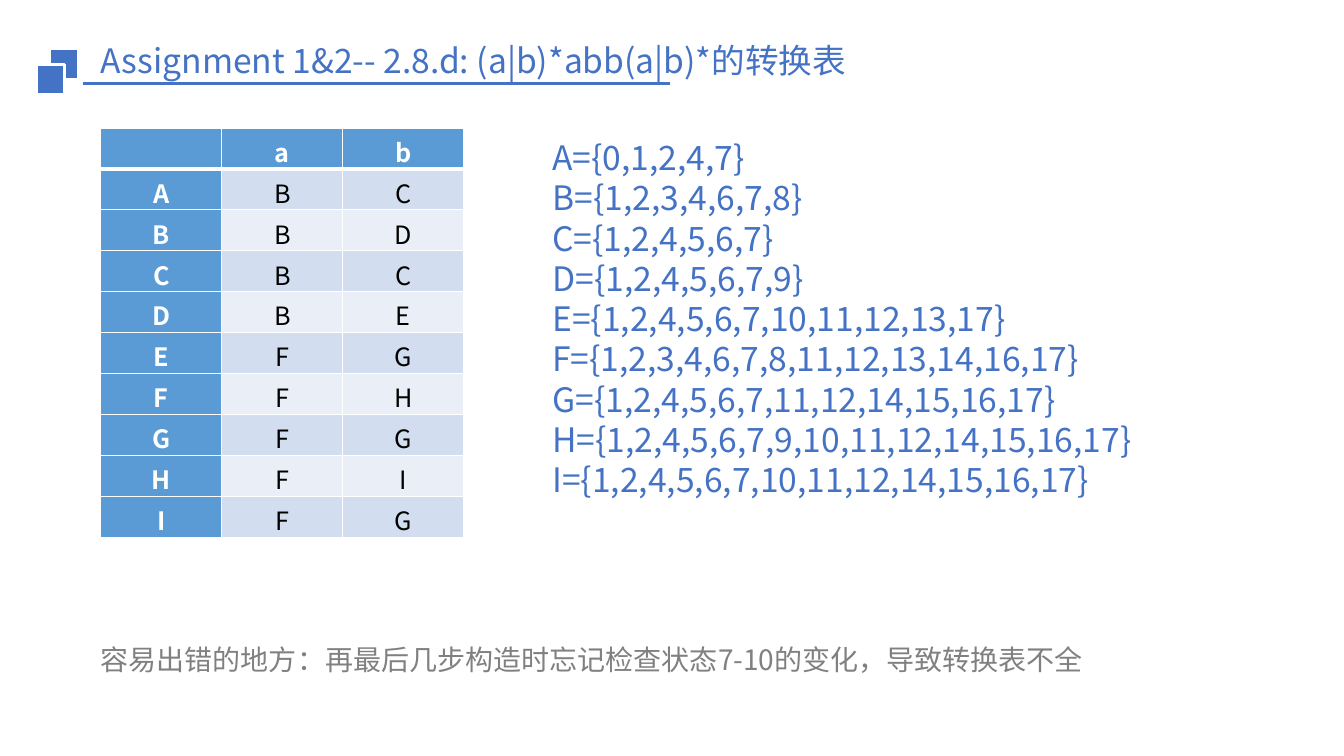
from lxml import etree
from pptx import Presentation
from pptx.dml.color import RGBColor
from pptx.enum.shapes import MSO_CONNECTOR as Connector, MSO_SHAPE as Shape
from pptx.enum.text import MSO_ANCHOR as Anchor, PP_ALIGN as Align
from pptx.oxml.ns import qn
from pptx.util import Inches, Pt

BLUE = RGBColor(0x44, 0x72, 0xC4)
HEADER = RGBColor(0x5B, 0x9B, 0xD5)
BANDS = RGBColor(0xD2, 0xDE, 0xEF), RGBColor(0xEA, 0xEF, 0xF7)
WHITE = RGBColor(0xFF, 0xFF, 0xFF)
BLACK = RGBColor(0, 0, 0)
GRAY = RGBColor(0x80, 0x80, 0x80)

TRANSITIONS = ["BC", "BD", "BC", "BE", "FG", "FH", "FG", "FI", "FG"]
STATES = "ABCDEFGHI"
STATE_SETS = [
    "0,1,2,4,7",
    "1,2,3,4,6,7,8",
    "1,2,4,5,6,7",
    "1,2,4,5,6,7,9",
    "1,2,4,5,6,7,10,11,12,13,17",
    "1,2,3,4,6,7,8,11,12,13,14,16,17",
    "1,2,4,5,6,7,11,12,14,15,16,17",
    "1,2,4,5,6,7,9,10,11,12,14,15,16,17",
    "1,2,4,5,6,7,10,11,12,14,15,16,17",
]


def set_format(target, values):
    for name, value in values.items():
        setattr(target, name, value)


class SlideBuilder:
    font_name = "Noto Sans CJK SC"

    def __init__(self, slide):
        self.shapes = slide.shapes

    def add_words(self, paragraph, words, size, color, bold=False):
        run = paragraph.add_run()
        run.text = words
        set_format(run.font, {"name": self.font_name, "size": Pt(size), "bold": bold})
        run.font.color.rgb = color
        east_asian = etree.SubElement(run.font._element, qn("a:ea"))
        east_asian.set("typeface", self.font_name)

    def text(self, box, lines, size, color, spacing=1.0, **frame_format):
        frame = self.shapes.add_textbox(*map(Inches, box)).text_frame
        set_format(frame, {"word_wrap": True, **frame_format})
        for index, line in enumerate(lines):
            paragraph = frame.add_paragraph() if index else frame.paragraphs[0]
            paragraph.line_spacing = spacing
            self.add_words(paragraph, line, size, color)

    def square(self, left, top):
        square = self.shapes.add_shape(
            Shape.RECTANGLE, *map(Inches, (left, top, 0.27, 0.29)))
        square.shadow.inherit = False
        square.fill.solid()
        square.fill.fore_color.rgb = BLUE
        square.line.color.rgb = WHITE
        square.line.width = Pt(1.5)

    def rule(self, left, right, y):
        rule = self.shapes.add_connector(
            Connector.STRAIGHT, *map(Inches, (left, y, right, y)))
        rule.line.color.rgb = BLUE
        rule.line.width = Pt(2.25)
        etree.SubElement(rule._element.spPr, qn("a:effectLst"))

    def borders(self, cell, widths):
        properties = cell._tc.get_or_add_tcPr()
        for side, width in widths.items():
            edge = etree.SubElement(properties, qn(f"a:ln{side}"), w=str(Pt(width)))
            fill = etree.SubElement(edge, qn("a:solidFill"))
            etree.SubElement(fill, qn("a:srgbClr"), val=str(WHITE))

    def table(self, box, rows):
        table = self.shapes.add_table(
            len(rows), len(rows[0]), *map(Inches, box)).table
        for r, row in enumerate(rows):
            for c, words in enumerate(row):
                cell = table.cell(r, c)
                heading = r == 0 or c == 0
                self.borders(cell, {"L": 1, "R": 1, "T": 3 if r == 1 else 1,
                                    "B": 3 if r == 0 else 1})
                cell.fill.solid()
                cell.fill.fore_color.rgb = HEADER if heading else BANDS[(r - 1) % 2]
                cell.vertical_anchor = Anchor.MIDDLE
                paragraph = cell.text_frame.paragraphs[0]
                paragraph.alignment = Align.CENTER
                if words:
                    self.add_words(paragraph, words, 18,
                                   WHITE if heading else BLACK, heading)


def main():
    deck = Presentation()
    set_format(deck, {"slide_width": Inches(13.33), "slide_height": Inches(7.5)})
    builder = SlideBuilder(deck.slides.add_slide(deck.slide_layouts[6]))

    # Title with its rule and squares
    builder.rule(0.82, 6.65, 0.83)
    builder.square(0.5, 0.49)
    builder.square(0.37, 0.64)
    builder.text((0.9, 0.35, 10.55, 0.5),
                 ["Assignment 1&2-- 2.8.d: (a|b)*abb(a|b)*的转换表"],
                 24, BLUE, vertical_anchor=Anchor.MIDDLE)

    # State sets
    builder.text((5.38, 1.27, 7.95, 6.34),
                 [f"{state}={{{members}}}"
                  for state, members in zip(STATES, STATE_SETS)],
                 24, BLUE, spacing=Pt(28.75), margin_top=Inches(0.09))

    # Transition table
    builder.table((1, 1.27, 3.6, 4.06),
                  [["", "a", "b"]] + [[state, *targets] for state, targets
                                      in zip(STATES, TRANSITIONS)])

    # Common mistake
    builder.text((0.9, 6.36, 10.75, 0.7),
                 ["容易出错的地方：再最后几步构造时忘记检查状态7-10的变化，导致转换表不全"],
                 20, GRAY, spacing=0.9)

    deck.save("out.pptx")


if __name__ == "__main__":
    main()
